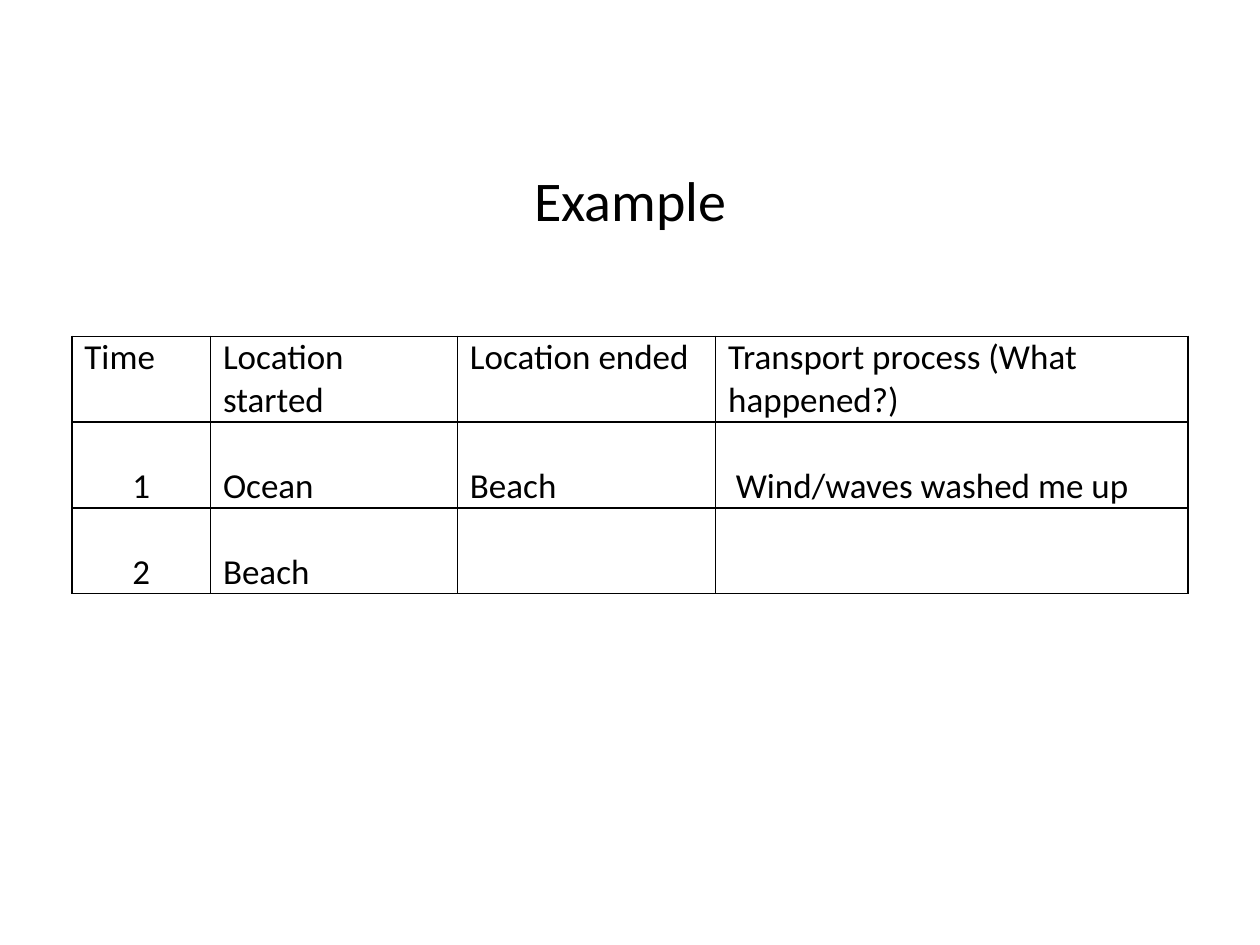
from lxml import etree
from pptx import Presentation
from pptx import util as u
from pptx.dml.color import RGBColor
from pptx.enum import text
from pptx.oxml.ns import qn

# Content
TITLE = "Example"
ROWS = [
    ["Time", "Location started", "Location ended", "Transport process (What happened?)"],
    ["1", "Ocean", "Beach", "Wind/waves washed me up"],
    ["2", "Beach", "", ""],
]

# Style and grid, in inches and points
COLORS = {"ink": "000000"}
FONT = "Calibri"
TITLE_BOX = (4.13, 1.26, 1.75, 0.64)
TABLE_LEFT, TABLE_TOP = 0.57, 2.67
COL_WIDTHS = [1.1, 1.96, 2.05, 3.75]
ROW_HEIGHT = 0.68
SIDE_MARGIN, INDENTED_MARGIN = 0.1, 0.16


def add_text(p, content, size):
    r = p.add_run()
    r.text = content
    r.font.name = FONT
    r.font.size = u.Pt(size)
    r.font.color.rgb = RGBColor.from_string(COLORS["ink"])


def add_borders(cell, width=1):
    tc_pr = cell._tc.get_or_add_tcPr()
    for side in ("lnL", "lnR", "lnT", "lnB"):
        ln = etree.SubElement(tc_pr, qn(f"a:{side}"), w=str(u.Pt(width)))
        fill = etree.SubElement(ln, qn("a:solidFill"))
        etree.SubElement(fill, qn("a:srgbClr"), val=COLORS["ink"])


prs = Presentation()
prs.slide_width, prs.slide_height = u.Inches(10), u.Inches(7.5)
s = prs.slides.add_slide(prs.slide_layouts[5])

# Title
title = s.shapes.title
title.left, title.top, title.width, title.height = map(u.Inches, TITLE_BOX)
tf = title.text_frame
tf.word_wrap = False
tf.vertical_anchor = text.MSO_ANCHOR.TOP
tf.paragraphs[0].alignment = text.PP_ALIGN.CENTER
add_text(tf.paragraphs[0], TITLE, 32)

# Table
table = s.shapes.add_table(
    len(ROWS), len(COL_WIDTHS), u.Inches(TABLE_LEFT), u.Inches(TABLE_TOP),
    u.Inches(sum(COL_WIDTHS)), u.Inches(ROW_HEIGHT * len(ROWS))).table
table.first_row = table.horz_banding = False
for column, width in zip(table.columns, COL_WIDTHS):
    column.width = u.Inches(width)

for i, row in enumerate(ROWS):
    table.rows[i].height = u.Inches(ROW_HEIGHT)
    for j, content in enumerate(row):
        cell = table.cell(i, j)
        body = i > 0
        indented = body and j == len(row) - 1
        cell.margin_left = u.Inches(INDENTED_MARGIN if indented else SIDE_MARGIN)
        cell.margin_right = u.Inches(SIDE_MARGIN)
        cell.margin_top = cell.margin_bottom = 0
        cell.vertical_anchor = text.MSO_ANCHOR.BOTTOM if body else text.MSO_ANCHOR.TOP
        add_borders(cell)
        cell.fill.background()
        p = cell.text_frame.paragraphs[0]
        if body and j == 0:
            p.alignment = text.PP_ALIGN.CENTER
        if content:
            add_text(p, content, 20)

prs.save("out.pptx")
